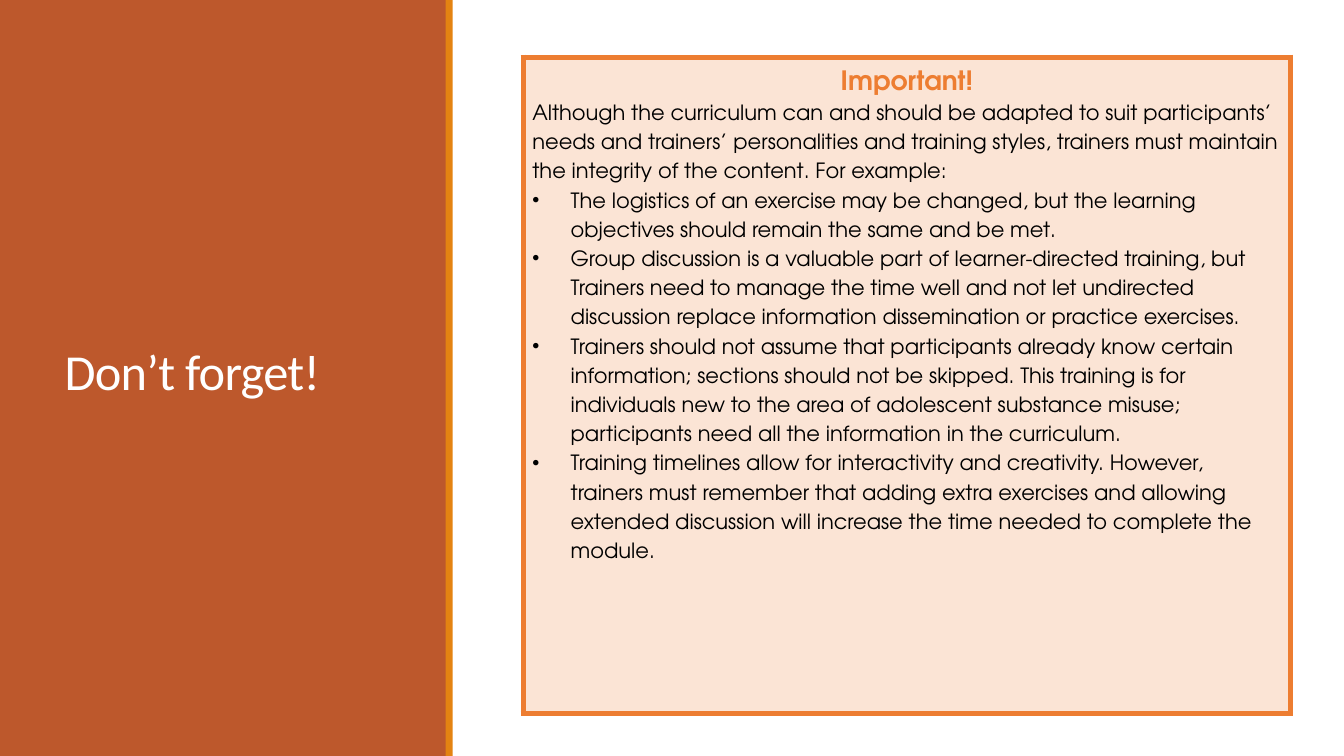
from pptx import Presentation
from pptx.dml.color import RGBColor
from pptx.enum import shapes, text
from pptx.oxml import parse_xml
from pptx.oxml.ns import nsdecls
from pptx.util import Inches, Pt

RUST, AMBER, ORANGE = "BD582C", "E48312", "ED7D31"
INTRO = (
    "Although the curriculum can and should be adapted to suit participants’ "
    "needs and trainers’ personalities and training styles, trainers must "
    "maintain the integrity of the content. For example:"
)
RULES = [
    "The logistics of an exercise may be changed, but the learning objectives "
    "should remain the same and be met.",
    "Group discussion is a valuable part of learner-directed training, but "
    "Trainers need to manage the time well and not let undirected discussion "
    "replace information dissemination or practice exercises.",
    "Trainers should not assume that participants already know certain "
    "information; sections should not be skipped. This training is for "
    "individuals new to the area of adolescent substance misuse; participants "
    "need all the information in the curriculum.",
    "Training timelines allow for interactivity and creativity. However, "
    "trainers must remember that adding extra exercises and allowing extended "
    "discussion will increase the time needed to complete the module.",
]


def color(code):
    return RGBColor.from_string(code)


class Page:
    head = "Calibri"
    body = "TeX Gyre Adventor"

    def __init__(self, deck):
        self.slide = deck.slides.add_slide(deck.slide_layouts[5])

    def font(self, para, name, size, code, bold=False):
        font = para.font
        font.name, font.size, font.bold = name, Pt(size), bold
        font.color.rgb = color(code)

    def bar(self, left, width, code):
        """Add a full-height band."""
        band = self.slide.shapes.add_shape(
            shapes.MSO_SHAPE.RECTANGLE, Inches(left), 0, Inches(width), Inches(7.5))
        band.shadow.inherit = False
        band.fill.solid()
        band.fill.fore_color.rgb = color(code)
        band.line.fill.background()

    def title(self, words, left, top, width, height):
        """Fill the title placeholder and bring it to the front."""
        box = self.slide.shapes.title
        box.left, box.top = Inches(left), Inches(top)
        box.width, box.height = Inches(width), Inches(height)
        frame = box.text_frame
        frame.text = words
        frame.word_wrap = True
        frame.vertical_anchor = text.MSO_ANCHOR.MIDDLE
        para = frame.paragraphs[0]
        para.alignment = text.PP_ALIGN.LEFT
        para.line_spacing = 0.85
        self.font(para, self.head, 36, "FFFFFF")
        para.runs[0].font._element.set("spc", "-50")
        self.slide.shapes._spTree.append(box._element)

    def panel(self, left, top, width, height):
        """Add a one-cell bordered table and return its cell."""
        table = self.slide.shapes.add_table(
            1, 1, Inches(left), Inches(top), Inches(width), Inches(height)).table
        table.first_row = table.horz_banding = False
        cell = table.cell(0, 0)
        cell.margin_left = cell.margin_right = Inches(0.09)
        cell.margin_top, cell.margin_bottom = Inches(0.01), 0
        props = cell._tc.get_or_add_tcPr()
        for side in ("lnL", "lnR", "lnT", "lnB"):
            props.append(parse_xml(
                f'<a:{side} {nsdecls("a")} w="{Pt(4.5)}"><a:solidFill>'
                f'<a:srgbClr val="{ORANGE}"/></a:solidFill></a:{side}>'))
        cell.fill.solid()
        cell.fill.fore_color.rgb = color("FBE4D5")
        return cell

    def para(self, para, words, size=15, code="000000", bold=False):
        para.text = words
        para.line_spacing = 1.5
        self.font(para, self.body, size, code, bold)
        return para

    def bullet(self, para, words):
        props = self.para(para, words)._p.get_or_add_pPr()
        props.set("marL", str(Inches(0.38)))
        props.set("indent", str(Inches(-0.38)))
        mark = parse_xml(f'<a:buChar {nsdecls("a")} char="•"/>')
        props.find("{*}defRPr").addprevious(mark)


def main():
    deck = Presentation()
    deck.slide_width, deck.slide_height = Inches(13.33), Inches(7.5)
    page = Page(deck)
    page.bar(0, 4.43, RUST)
    page.title("Don’t forget!", 0.54, 0.57, 3.37, 6.31)
    page.bar(4.42, 0.07, AMBER)
    frame = page.panel(5.19, 0.57, 7.61, 6.51).text_frame
    top = page.para(frame.paragraphs[0], "Important!", 19, ORANGE, True)
    top.alignment = text.PP_ALIGN.CENTER
    page.para(frame.add_paragraph(), INTRO)
    for rule in RULES:
        page.bullet(frame.add_paragraph(), rule)
    deck.save("out.pptx")


if __name__ == "__main__":
    main()
